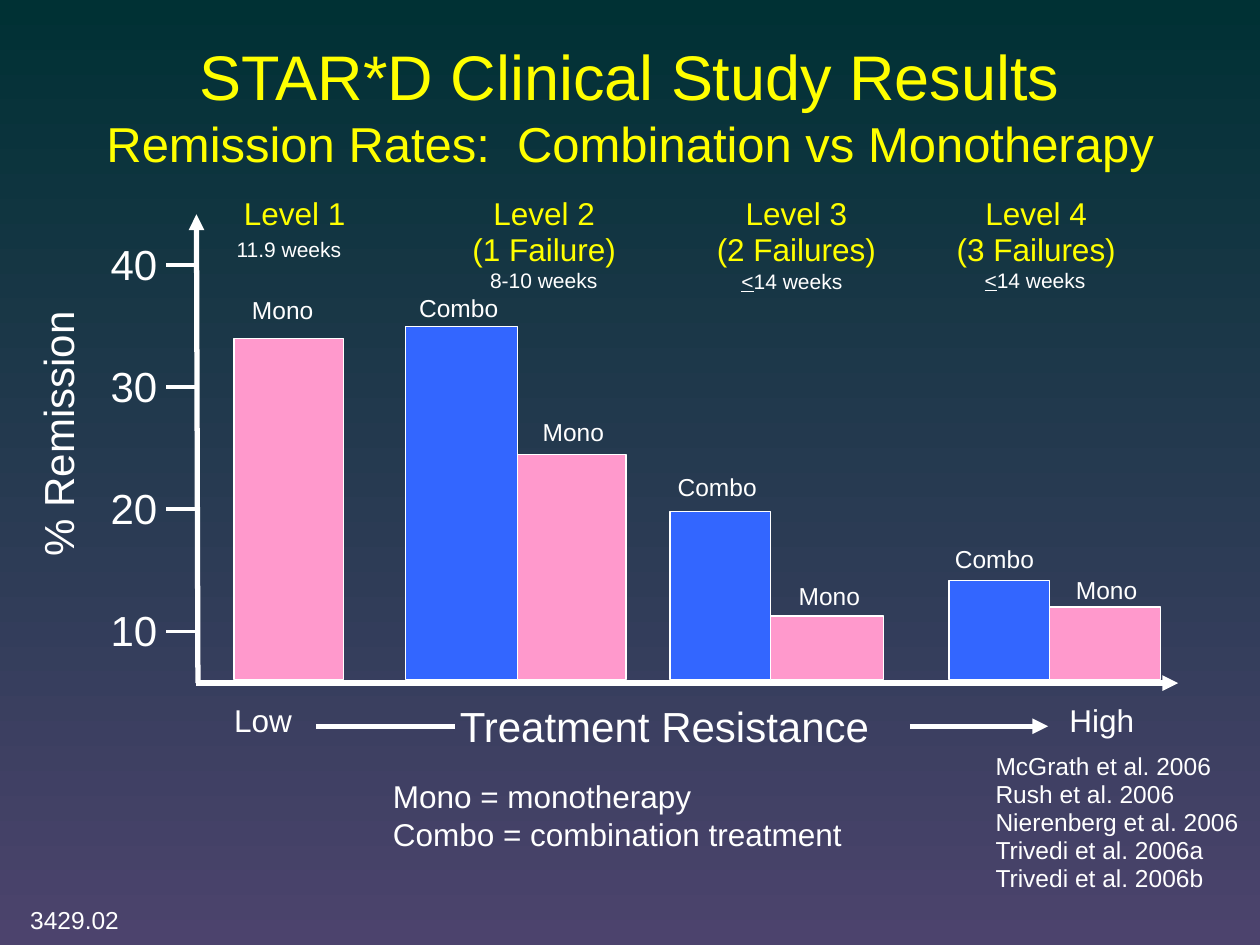
from dataclasses import dataclass

from lxml.etree import SubElement
from pptx import Presentation
from pptx.dml.color import RGBColor
from pptx.enum.shapes import MSO_CONNECTOR, MSO_SHAPE
from pptx.enum.text import MSO_ANCHOR, MSO_AUTO_SIZE, PP_ALIGN
from pptx.oxml.ns import qn
from pptx.util import Cm, Pt

FONT = "Arial"
WHITE = "FFFFFF"
YELLOW = "FFFF00"
PINK = "FF99CC"
BLUE = "3366FF"
BASELINE = 13.7
AXIS_LEFT = 3.96
AXIS_TOP = 13.77
HEADING_TOP = 3.84


@dataclass(frozen=True)
class Box:
    left: float
    top: float
    width: float
    height: float


@dataclass(frozen=True)
class Bar:
    name: str
    color: str
    left: float
    top: float
    width: float
    label_left: float
    label_top: float


@dataclass(frozen=True)
class Level:
    heading: list[str]
    heading_left: float
    heading_width: float
    duration: list[str]
    duration_left: float
    duration_top: float


BARS = [
    Bar("Mono", PINK, 4.72, 6.83, 2.21, 4.83, 5.82),
    Bar("Mono", PINK, 10.13, 9.17, 2.49, 10.69, 8.28),
    Bar("Combo", BLUE, 8.18, 6.58, 2.26, 8.2, 5.79),
    Bar("Mono", PINK, 15.27, 12.42, 2.54, 15.85, 11.58),
    Bar("Combo", BLUE, 13.51, 10.31, 2.03, 13.41, 9.4),
    Bar("Mono", PINK, 20.85, 12.24, 2.54, 21.44, 11.46),
    Bar("Combo", BLUE, 19.13, 11.71, 2.03, 19.0, 10.85),
]
LABEL_WIDTHS = {"Mono": 1.83, "Combo": 2.21}

LEVELS = [
    Level(["Level 1"], 4.01, 3.86, ["11.9 weeks"], 4.52, 4.65),
    Level(["Level 2", "(1 Failure)"], 8.71, 4.52, ["8-10 weeks"], 9.63, 5.26),
    Level(["Level 3", "(2 Failures)"], 13.54, 5.03, [" ", "<", "14 weeks"], 14.58, 5.28),
    Level(["Level 4", "(3 Failures)"], 18.72, 4.34, [" ", "<", "14 weeks"], 19.48, 5.26),
]


def rgb(color: str) -> RGBColor:
    return RGBColor.from_string(color)


def add_run(paragraph, text: str, size: float, color: str = WHITE):
    run = paragraph.add_run()
    run.text = text
    run.font.name = FONT
    run.font.size = Pt(size)
    run.font.color.rgb = rgb(color)
    return run


def place(shape, box: Box) -> None:
    shape.left, shape.top = Cm(box.left), Cm(box.top)
    shape.width, shape.height = Cm(box.width), Cm(box.height)


def add_text(slide, box: Box, paragraphs: list[list[str]], size: float, color: str = WHITE,
             wrap: bool = False, centered: bool = False, spacing: float = 1.0):
    shape = slide.shapes.add_textbox(Cm(box.left), Cm(box.top), Cm(box.width), Cm(box.height))
    frame = shape.text_frame
    frame.word_wrap = wrap
    frame.auto_size = MSO_AUTO_SIZE.SHAPE_TO_FIT_TEXT
    for index, texts in enumerate(paragraphs):
        paragraph = frame.add_paragraph() if index else frame.paragraphs[0]
        paragraph.alignment = PP_ALIGN.CENTER if centered else PP_ALIGN.LEFT
        paragraph.line_spacing = spacing
        for text in texts:
            run = add_run(paragraph, text, size, color)
            if text == "<":
                run.font.underline = True
    return shape


def add_line(slide, start: tuple[float, float], end: tuple[float, float],
             width: float = 3, arrow: bool = False):
    connector = slide.shapes.add_connector(
        MSO_CONNECTOR.STRAIGHT, Cm(start[0]), Cm(start[1]), Cm(end[0]), Cm(end[1]))
    connector.line.color.rgb = rgb(WHITE)
    connector.line.width = Pt(width)
    if arrow:
        SubElement(connector.line._get_or_add_ln(), qn("a:tailEnd"), type="triangle")
    SubElement(connector._element.spPr, qn("a:effectLst"))
    return connector


def add_title(slide) -> None:
    title = slide.shapes.title
    place(title, Box(1.27, 0.53, 22.86, 3.18))
    frame = title.text_frame
    frame.auto_size = MSO_AUTO_SIZE.NONE
    frame.vertical_anchor = MSO_ANCHOR.MIDDLE
    paragraph = frame.paragraphs[0]
    paragraph.alignment = PP_ALIGN.CENTER
    add_run(paragraph, "STAR*D Clinical Study Results", 36, YELLOW)
    paragraph.add_line_break()
    add_run(paragraph, "Remission Rates:  Combination vs Monotherapy", 28, YELLOW)


def add_axes(slide) -> None:
    axis_title = add_text(slide, Box(-1.57, 8.1, 5.46, 1.27), [["% Remission"]], 24)
    axis_title.rotation = 270
    for index, value in enumerate((10, 20, 30, 40)):
        tick_top = 12.73 - index * 2.46
        add_line(slide, (3.35, tick_top), (AXIS_LEFT, tick_top), 2.25)
        add_text(slide, Box(1.98, tick_top - 0.66, 1.45, 1.27), [[str(value)]], 24)
    add_line(slide, (3.99, AXIS_TOP), (AXIS_LEFT, 4.32), arrow=True)
    add_line(slide, (AXIS_LEFT, AXIS_TOP), (23.75, AXIS_TOP), arrow=True)


def add_bar(slide, bar: Bar) -> None:
    shape = slide.shapes.add_shape(
        MSO_SHAPE.RECTANGLE, Cm(bar.left), Cm(bar.top), Cm(bar.width), Cm(BASELINE - bar.top))
    shape.shadow.inherit = False
    shape.fill.solid()
    shape.fill.fore_color.rgb = rgb(bar.color)
    shape.line.color.rgb = rgb(WHITE)
    shape.line.width = Pt(0.75)
    label_box = Box(bar.label_left, bar.label_top, LABEL_WIDTHS[bar.name], 0.84)
    add_text(slide, label_box, [[bar.name]], 14)


def add_level(slide, level: Level) -> None:
    height = 0.99 if len(level.heading) == 1 else 1.7
    add_text(slide, Box(level.heading_left, HEADING_TOP, level.heading_width, height),
             [[line] for line in level.heading], 18, YELLOW,
             wrap=True, centered=True, spacing=0.95)
    add_text(slide, Box(level.duration_left, level.duration_top, 2.73, 0.76),
             [level.duration], 12)


def add_resistance_scale(slide) -> None:
    middle = 14.64
    scale_title = add_text(slide, Box(9.02, 14.0, 9.32, 1.28), [["Treatment Resistance"]], 24)
    add_text(slide, Box(4.47, 14.0, 1.78, 1.02), [["Low"]], 18)
    add_text(slide, Box(21.31, 14.0, 1.93, 1.02), [["High"]], 18)
    add_line(slide, (6.38, middle), (9.17, middle))
    arrow = add_line(slide, (18.34, middle), (21.13, middle), arrow=True)
    arrow.begin_connect(scale_title, 3)


def add_notes_and_sources(slide) -> None:
    add_text(slide, Box(7.67, 15.54, 10.26, 1.78),
             [["Mono = monotherapy"], ["Combo = combination treatment"]], 18)
    sources = ["McGrath et al. 2006", "Rush et al. 2006", "Nierenberg et al. 2006",
               "Trivedi et al. 2006a", "Trivedi et al. 2006b"]
    source_box = add_text(slide, Box(20.07, 15.19, 5.97, 3.35),
                          [[source] for source in sources], 14, wrap=True, spacing=0.95)
    frame = source_box.text_frame
    frame.margin_left = frame.margin_right = frame.margin_top = frame.margin_bottom = Cm(0)
    add_text(slide, Box(0.36, 18.16, 2.82, 0.81), [["3429.02"]], 14, wrap=True, spacing=0.95)


def main() -> None:
    presentation = Presentation()
    presentation.slide_width = Cm(25.4)
    presentation.slide_height = Cm(19.05)
    slide = presentation.slides.add_slide(presentation.slide_layouts[5])
    background = slide.background.fill
    background.gradient()
    background.gradient_angle = 270
    for stop, color in zip(background.gradient_stops, ("003134", "4C436D")):
        stop.color.rgb = rgb(color)
    add_title(slide)
    add_axes(slide)
    for bar in BARS:
        add_bar(slide, bar)
    for level in LEVELS:
        add_level(slide, level)
    add_resistance_scale(slide)
    add_notes_and_sources(slide)
    presentation.save("out.pptx")


if __name__ == "__main__":
    main()
